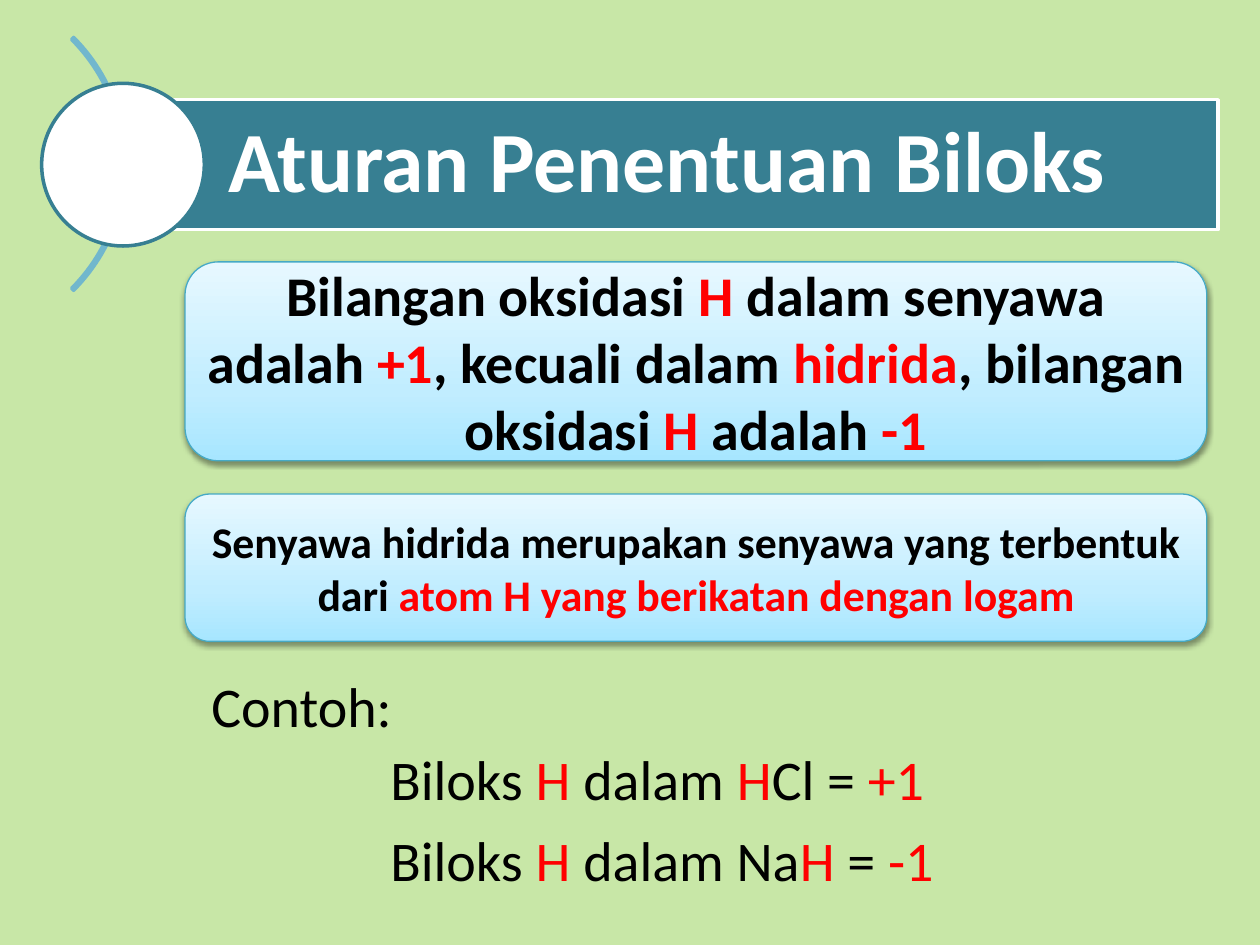
import copy
import pptx
import pptx.dml.color
import pptx.enum.shapes
import pptx.enum.text
import pptx.oxml
import pptx.oxml.ns
import pptx.util

Cm = pptx.util.Cm
Pt = pptx.util.Pt
SHAPE = pptx.enum.shapes.MSO_SHAPE
ALIGN = pptx.enum.text.PP_ALIGN
ANCHOR = pptx.enum.text.MSO_ANCHOR

THEME = {
    "font": "Calibri",
    "background": "C8E7A7",
    "text": "000000",
    "accent": "FF0000",
    "white": "FFFFFF",
    "banner": "377F92",
    "arc": "71B7CD",
    "card_line": "46AAC5",
    "card_stops": [(0, "A7E6FF"), (0.35, "C1EDFF"), (1, "E7F8FF")],
    "title_size": 49,
    "body_size": 32,
    "note_size": 25,
}

SHADOW = (
    f'<a:effectLst {pptx.oxml.ns.nsdecls("a")}>'
    '<a:outerShdw blurRad="40000" dist="20000" dir="5400000" rotWithShape="0">'
    '<a:srgbClr val="000000"><a:alpha val="38000"/></a:srgbClr>'
    "</a:outerShdw></a:effectLst>"
)


def color(name):
    return pptx.dml.color.RGBColor.from_string(THEME.get(name, name))


def apply(target, values):
    for name, value in values.items():
        setattr(target, name, value)


class SlideBuilder:
    def __init__(self, presentation):
        self.slide = presentation.slides.add_slide(presentation.slide_layouts[6])
        background = self.slide.background.fill
        background.solid()
        background.fore_color.rgb = color("background")

    def shape(self, kind, box, fill, line, width):
        shape = self.slide.shapes.add_shape(kind, *map(Cm, box))
        shape.shadow.inherit = False
        if fill:
            shape.fill.solid()
            shape.fill.fore_color.rgb = color(fill)
        else:
            shape.fill.background()
        shape.line.color.rgb = color(line)
        shape.line.width = Pt(width)
        return shape

    def add_text(self, shape, text, size, frame={}, layout={}, bold=False, base="text"):
        apply(shape.text_frame, {"word_wrap": True, **frame})
        paragraph = shape.text_frame.paragraphs[0]
        apply(paragraph, {"alignment": ALIGN.LEFT, **layout})
        for index, part in enumerate(text.split("|")):
            if part:
                run = paragraph.add_run()
                run.text = part
                apply(run.font, {"name": THEME["font"], "size": Pt(THEME[size]), "bold": bold})
                run.font.color.rgb = color("accent" if index % 2 else base)

    def arc(self, box):
        shape = self.shape(SHAPE.BLOCK_ARC, box, None, "arc", 2)
        for index, value in enumerate((189, 27, 0.008)):
            shape.adjustments[index] = value

    def banner(self, box, text):
        shape = self.shape(SHAPE.RECTANGLE, box, "banner", "white", 2)
        margins = {f"margin_{side}": Cm(0.36) for side in ("top", "right", "bottom")}
        frame = {"vertical_anchor": ANCHOR.MIDDLE, "margin_left": Cm(2.11), **margins}
        self.add_text(shape, text, "title_size", frame, {"line_spacing": 0.9}, True, "white")

    def circle(self, box):
        self.shape(SHAPE.OVAL, box, "white", "banner", 2)

    def card(self, box, text, size):
        shape = self.shape(SHAPE.ROUNDED_RECTANGLE, box, None, "card_line", 0.75)
        shape.fill.gradient()
        shape.fill.gradient_angle = 90
        properties = shape._element.spPr
        stop_list = properties.find(".//" + pptx.oxml.ns.qn("a:gsLst"))
        stop_list.insert(1, copy.deepcopy(stop_list[0]))
        for stop, (position, value) in zip(shape.fill.gradient_stops, THEME["card_stops"]):
            stop.position = position
            stop.color.rgb = color(value)
        effects = properties.find(pptx.oxml.ns.qn("a:effectLst"))
        properties.replace(effects, pptx.oxml.parse_xml(SHADOW))
        self.add_text(shape, text, size, {"vertical_anchor": ANCHOR.MIDDLE},
                      {"alignment": ALIGN.CENTER}, True)

    def label(self, box, text, wrap=True):
        shape = self.slide.shapes.add_textbox(*map(Cm, box))
        self.add_text(shape, text, "body_size", {"word_wrap": wrap})


def main():
    presentation = pptx.Presentation()
    apply(presentation, {"slide_width": Cm(25.4), "slide_height": Cm(19.05)})
    builder = SlideBuilder(presentation)

    builder.arc((-4.67, -0.3, 7.21, 7.21))
    builder.banner((2.49, 2.01, 22.07, 2.62), "Aturan Penentuan Biloks")
    builder.circle((0.84, 1.68, 3.28, 3.28))

    card_left, card_width = 3.73, 20.6
    builder.card(
        (card_left, 5.28, card_width, 4.01),
        "Bilangan oksidasi |H |dalam senyawa adalah |+1|, kecuali dalam "
        "|hidrida|, bilangan oksidasi |H| adalah |-1",
        "body_size",
    )
    builder.card(
        (card_left, 9.96, card_width, 2.97),
        "Senyawa hidrida merupakan senyawa yang terbentuk dari "
        "|atom H yang berikatan dengan logam",
        "note_size",
    )

    builder.label((4.01, 13.41, 4.78, 1.4), "Contoh:")
    examples = ("Biloks |H| dalam |H|Cl = |+1", "Biloks |H| dalam Na|H| = |-1")
    for row, example in enumerate(examples):
        builder.label((7.62, 14.88 + row * 1.63, 11.5, 1.63), example, wrap=False)

    presentation.save("out.pptx")


if __name__ == "__main__":
    main()
